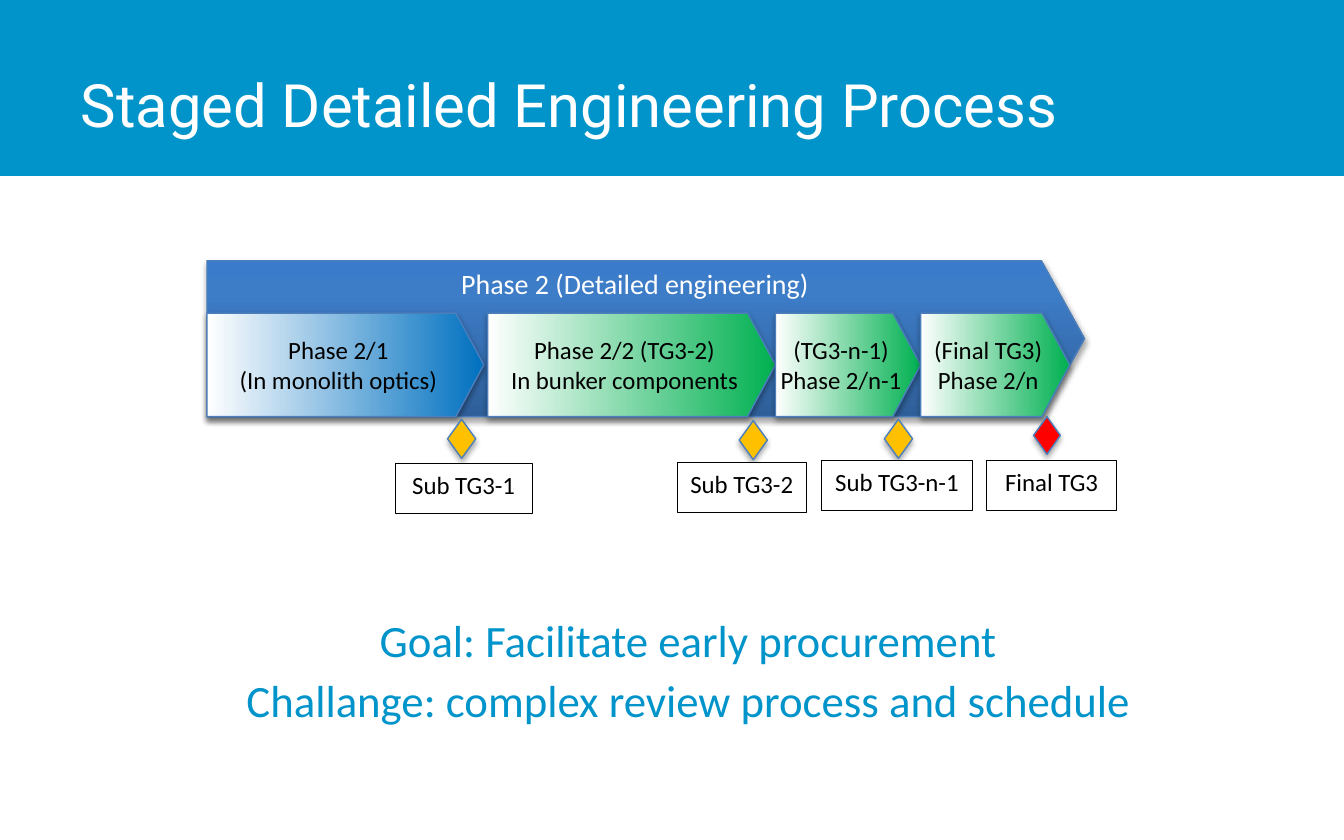
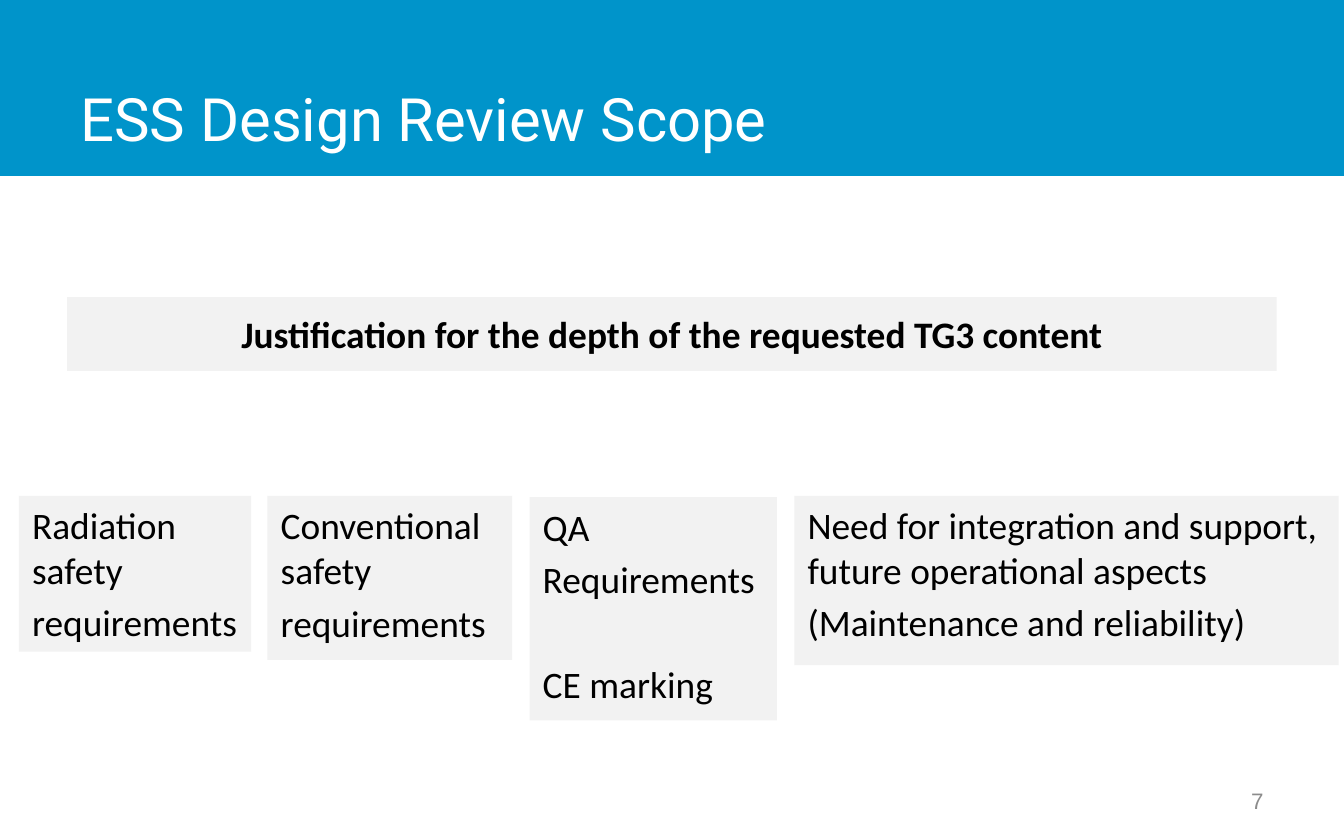
import dataclasses

import pptx
import pptx.dml.color
import pptx.enum.shapes
import pptx.enum.text
import pptx.oxml
import pptx.oxml.ns
import pptx.util

SHAPE = pptx.enum.shapes.MSO_SHAPE
ALIGN = pptx.enum.text.PP_ALIGN
ANCHOR = pptx.enum.text.MSO_ANCHOR
EMU_PER_PX = 9144
TITLE_ONLY = 5


@dataclasses.dataclass(frozen=True)
class Theme:
    brand: str = "0094CA"
    white: str = "FFFFFF"
    black: str = "000000"
    panel: str = "F2F2F2"
    muted: str = "8C8C8C"
    edge: str = "4B7EBC"
    blue: str = "0070C0"
    green: str = "00B050"
    amber: str = "FFC000"
    red: str = "FF0000"
    phase: tuple = ((0, "2F5F99"), (80, "3D7CC7"), (100, "3A7CCB"))
    head_font: str = "Roboto"
    body_font: str = "Calibri"
    number_font: str = "Arial"
    title: float = 32
    goal: float = 24
    body: float = 20
    phase_label: float = 15
    label: float = 13.3
    number: float = 12


THEME = Theme()


def px(value):
    return pptx.util.Emu(value * EMU_PER_PX)


def rgb(color):
    return pptx.dml.color.RGBColor.from_string(color)


def assign(target, values):
    for name, value in values.items():
        setattr(target, name, value)


def put_text(sp, lines, size, color=THEME.black, font=THEME.body_font, bold=False,
             align=ALIGN.LEFT, anchor=ANCHOR.TOP, inset=(10, 5), wrap=True,
             gaps=(), paragraph_format=None):
    tf = sp.text_frame
    side, top = map(px, inset)
    assign(tf, {
        "auto_size": pptx.enum.text.MSO_AUTO_SIZE.NONE,
        "word_wrap": wrap,
        "vertical_anchor": anchor,
        "margin_left": side,
        "margin_right": side,
        "margin_top": top,
        "margin_bottom": top,
    })
    for i, line in enumerate(lines):
        p = tf.paragraphs[0] if i == 0 else tf.add_paragraph()
        gap = gaps[i - 1] if i and gaps else 0
        assign(p, {"alignment": align, "space_before": pptx.util.Pt(gap)})
        assign(p, paragraph_format or {})
        r = p.add_run()
        r.text = line
        assign(r.font, {"name": font, "size": pptx.util.Pt(size), "bold": bold})
        r.font.color.rgb = rgb(color)


def add_shape(s, kind, box, fill, line=None, weight=0.75):
    sp = s.shapes.add_shape(kind, *map(px, box))
    sp.shadow.inherit = False
    sp.fill.solid()
    sp.fill.fore_color.rgb = rgb(fill)
    if line:
        sp.line.color.rgb = rgb(line)
        sp.line.width = pptx.util.Pt(weight)
    else:
        sp.line.fill.background()
    return sp


def add_text(s, box, lines, size, **style):
    sp = s.shapes.add_textbox(*map(px, box))
    put_text(sp, lines, size, **style)


def drop_shadow(sp):
    effects = sp.element.spPr.find(pptx.oxml.ns.qn("a:effectLst"))
    effects.append(pptx.oxml.parse_xml(
        f'<a:outerShdw {pptx.oxml.ns.nsdecls("a")} blurRad="39370" dist="22860" '
        f'dir="5400000" rotWithShape="0"><a:srgbClr val="{THEME.black}">'
        '<a:alpha val="35000"/></a:srgbClr></a:outerShdw>'))


def gradient(sp, stops, angle):
    items = "".join(f'<a:gs pos="{pos * 1000}"><a:srgbClr val="{color}"/></a:gs>'
                    for pos, color in stops)
    grad = pptx.oxml.parse_xml(
        f'<a:gradFill {pptx.oxml.ns.nsdecls("a")} rotWithShape="1">'
        f'<a:gsLst>{items}</a:gsLst><a:lin ang="{angle * 60000}" scaled="0"/></a:gradFill>')
    spPr = sp.element.spPr
    spPr.replace(spPr.find(pptx.oxml.ns.qn("a:solidFill")), grad)


def add_arrow(s, box, stops, angle, point, lines, size, **style):
    sp = add_shape(s, SHAPE.PENTAGON, box, THEME.white, THEME.edge)
    sp.adjustments[0] = point
    gradient(sp, stops, angle)
    drop_shadow(sp)
    put_text(sp, lines, size, align=ALIGN.CENTER, **style)


def add_subphase(s, left, width, color, lines):
    add_arrow(s, (left, 233, width, 77), ((0, color), (100, THEME.white)), 180, 0.269,
              lines, THEME.label, anchor=ANCHOR.MIDDLE, inset=(3, 0), wrap=False)


def add_gate(s, diamond, color, box, label):
    drop_shadow(add_shape(s, SHAPE.DIAMOND, diamond, color, THEME.edge))
    sp = add_shape(s, SHAPE.RECTANGLE, box, THEME.white, THEME.black, 0.5)
    put_text(sp, [label], THEME.label, align=ALIGN.CENTER, anchor=ANCHOR.MIDDLE,
             inset=(8, 4), paragraph_format={"line_spacing": pptx.util.Pt(11.7),
                                             "space_after": pptx.util.Pt(10)})


def add_panel(s, box, lines, **style):
    sp = add_shape(s, SHAPE.RECTANGLE, box, THEME.panel)
    put_text(sp, lines, THEME.body, **style)


def add_slide(prs, title, top, height):
    s = prs.slides.add_slide(prs.slide_layouts[TITLE_ONLY])
    sp = s.shapes.title
    assign(sp, dict(zip(("left", "top", "width", "height"),
                        map(px, (50, top, 781, height)))))
    put_text(sp, [title], THEME.title, color=THEME.white, font=THEME.head_font,
             anchor=ANCHOR.MIDDLE)
    return s


def add_layout_band(s):
    band = add_shape(s, SHAPE.RECTANGLE, (0, 0, 1000, 131), THEME.brand)
    s.slide_layout.placeholders[0].element.addprevious(band.element)


def build_process(prs):
    s = add_slide(prs, "Staged Detailed Engineering Process", 25, 104)
    add_layout_band(s)
    add_arrow(s, (154, 194, 653, 116), THEME.phase, 270, 0.277,
              ["Phase 2 (Detailed engineering)"], THEME.phase_label,
              color=THEME.white, inset=(8, 4))
    for subphase in (
        (154, 206, THEME.blue, ["Phase 2/1", "(In monolith optics)"]),
        (363, 214, THEME.green, ["Phase 2/2 (TG3-2)", "In bunker components"]),
        (577, 108, THEME.green, ["(TG3-n-1)", "Phase 2/n-1"]),
        (685, 111, THEME.green, ["(Final TG3)", "Phase 2/n"]),
    ):
        add_subphase(s, *subphase)
    for gate in (
        ((333, 312, 21, 29), THEME.amber, (294, 345, 102, 37), "Sub TG3-1"),
        ((550, 313, 21, 29), THEME.amber, (504, 344, 96, 37), "Sub TG3-2"),
        ((658, 312, 21, 29), THEME.amber, (611, 343, 113, 37), "Sub TG3-n-1"),
        ((769, 310, 20, 28), THEME.red, (734, 343, 97, 37), "Final TG3"),
    ):
        add_gate(s, *gate)
    add_text(s, (106, 456, 812, 94),
             ["Goal: Facilitate early procurement",
              "Challange: complex review process and schedule"],
             THEME.goal, color=THEME.brand, align=ALIGN.CENTER, inset=(0, 0), gaps=(3.3,))


def build_scope(prs):
    s = add_slide(prs, "ESS Design Review Scope", 46, 83)
    add_panel(s, (50, 221, 900, 55),
              ["Justification for the depth of the requested TG3 content"],
              bold=True, align=ALIGN.CENTER, anchor=ANCHOR.MIDDLE)
    for box, lines, gaps in (
        ((14, 369, 173, 116), ["Radiation safety", "requirements"], (4,)),
        ((199, 369, 182, 122), ["Conventional safety", "requirements"], (4,)),
        ((394, 370, 184, 166), ["QA", "Requirements", "CE marking"], (4, 32)),
        ((591, 369, 405, 126),
         ["Need for integration and support, future operational aspects",
          "(Maintenance and reliability)"], (4,)),
    ):
        add_panel(s, box, lines, gaps=gaps)
    add_text(s, (717, 579, 233, 33), ["7"], THEME.number, color=THEME.muted,
             font=THEME.number_font, align=ALIGN.RIGHT, anchor=ANCHOR.MIDDLE)


def main():
    prs = pptx.Presentation()
    assign(prs, {"slide_width": px(1000), "slide_height": px(625)})
    build_process(prs)
    build_scope(prs)
    prs.save("out.pptx")


if __name__ == "__main__":
    main()
